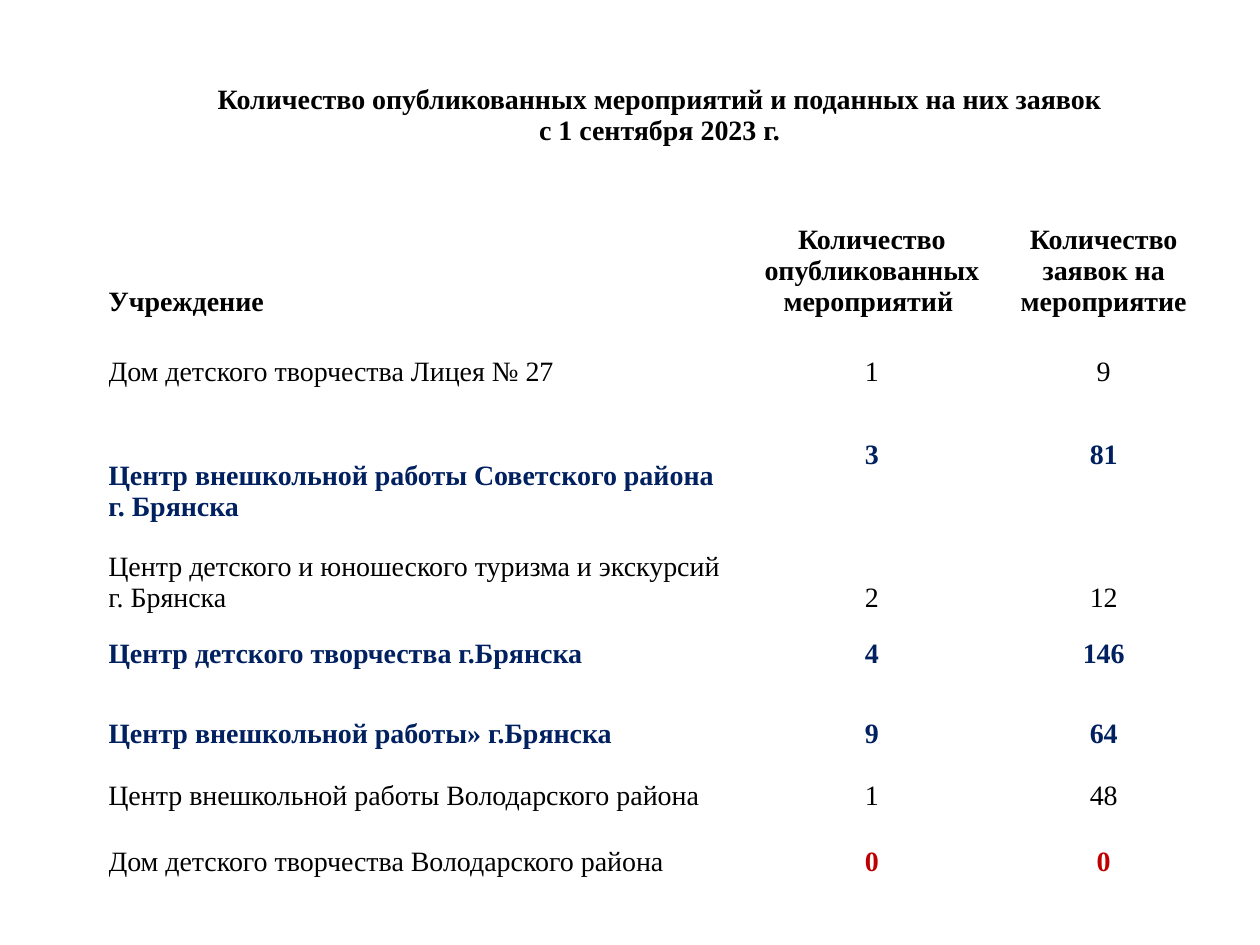
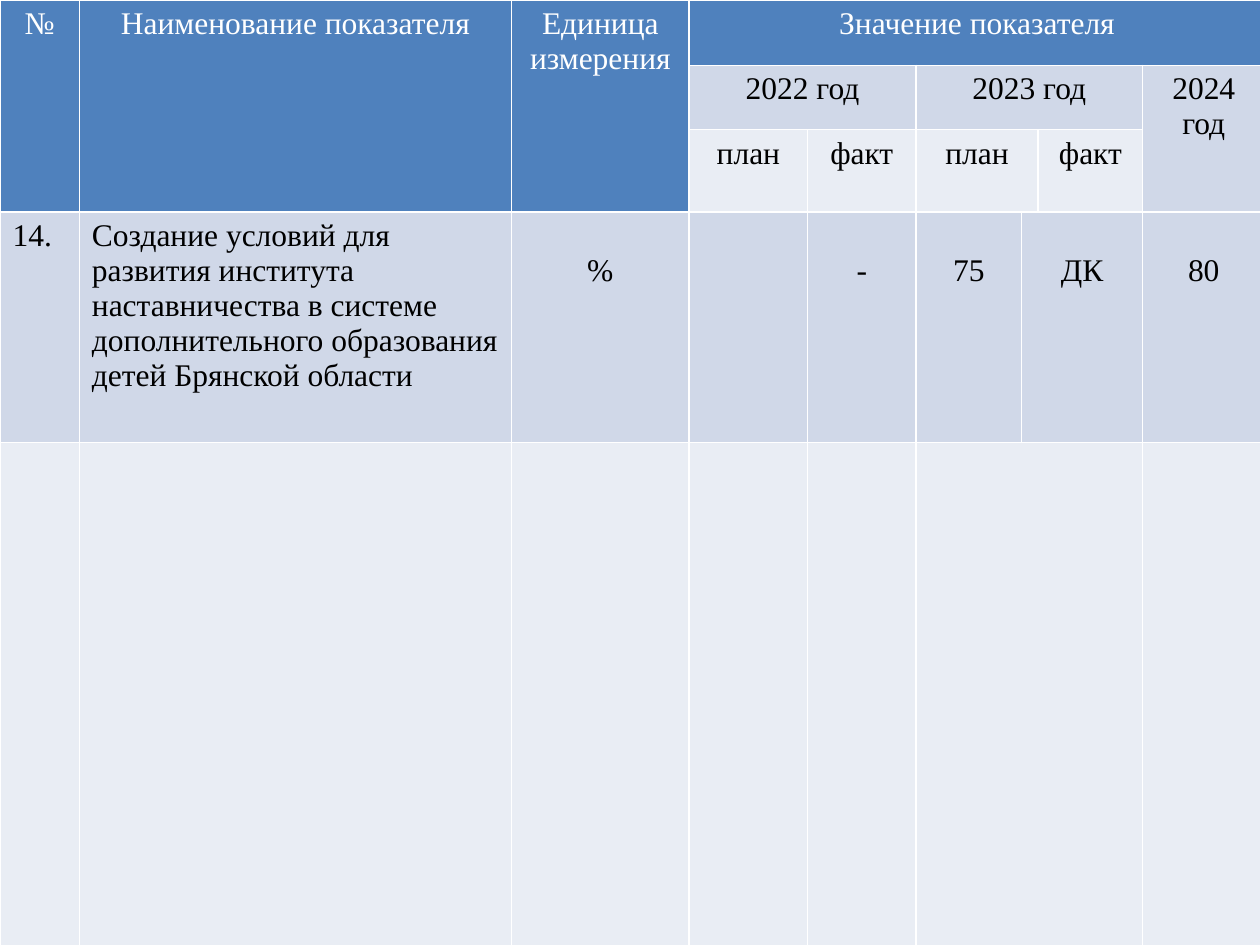
from lxml import etree
from pptx import Presentation
from pptx.dml.color import RGBColor
from pptx.enum.text import MSO_ANCHOR, PP_ALIGN
from pptx.oxml.ns import qn
from pptx.util import Inches, Pt

LEFT, CENTER = PP_ALIGN.LEFT, PP_ALIGN.CENTER
TOP, MIDDLE, BOTTOM = MSO_ANCHOR.TOP, MSO_ANCHOR.MIDDLE, MSO_ANCHOR.BOTTOM

FONT = "Times New Roman"
BLACK, WHITE, NAVY, RED = "000000", "FFFFFF", "002060", "C00000"
HEADER_BLUE, BAND_DARK, BAND_LIGHT = "4F81BD", "D0D8E8", "E9EDF4"

# Shared by both slides
BLANK_LAYOUT = 6
BORDER_EDGES = ("a:lnL", "a:lnR", "a:lnT", "a:lnB")

# Slide 1: each institution row is (anchor, lines), a line is
# (institution, events, applications, name colour, number colour)
EVENT_COLUMNS = (5.07, 1.98, 1.7)
EVENT_ROWS = (0.73, 1.24, 0.56, 1.07, 0.72, 0.65, 0.92, 0.81)
EVENT_SIZE, EVENT_GAP = 16, 17.7
EVENT_TITLE = ("Количество опубликованных мероприятий и поданных на них заявок",
               "с 1 сентября 2023 г.")
EVENT_HEADINGS = ("Учреждение", "Количество опубликованных мероприятий ",
                  "Количество заявок на мероприятие")
INSTITUTIONS = (
    (BOTTOM, [("Дом детского творчества Лицея № 27", "1", "9", BLACK, BLACK)]),
    (MIDDLE, [("Центр внешкольной работы Советского района\nг. Брянска",
               "3", "81", NAVY, NAVY)]),
    (BOTTOM, [("Центр детского и юношеского туризма и экскурсий\nг. Брянска",
               "2", "12", BLACK, BLACK)]),
    (MIDDLE, [("Центр детского творчества г.Брянска", "4", "146", NAVY, NAVY)]),
    (BOTTOM, [("Центр внешкольной работы» г.Брянска", "9", "64", NAVY, NAVY),
              ("Центр внешкольной работы Володарского района",
               "1", "48", BLACK, BLACK)]),
    (MIDDLE, [("Дом детского творчества Володарского района",
               "0", "0", BLACK, RED)]),
)

# Slide 2: (row, column, rows spanned, columns spanned, text)
INDICATOR_COLUMNS = (0.63, 3.43, 1.41, 0.94, 0.86, 0.84, 0.13, 0.83, 0.97)
INDICATOR_ROWS = (0.52, 0.51, 0.65, 1.83, 4.05)
INDICATOR_FILLS = (HEADER_BLUE, BAND_DARK, BAND_LIGHT, BAND_DARK, BAND_LIGHT)
INDICATOR_SIZE, VALUE_ROW, VALUE_TOP = 18, 3, 0.33
INDICATOR_CELLS = (
    (0, 0, 3, 1, "№"),
    (0, 1, 3, 1, "Наименование показателя"),
    (0, 2, 3, 1, "Единица измерения"),
    (0, 3, 1, 6, "Значение показателя"),
    (1, 3, 1, 2, "2022 год"),
    (1, 5, 1, 3, "2023 год"),
    (1, 8, 2, 1, "2024 год"),
    (2, 3, 1, 1, "план"),
    (2, 4, 1, 1, "факт"),
    (2, 5, 1, 2, "план"),
    (2, 7, 1, 1, "факт"),
    (3, 0, 1, 1, "14."),
    (3, 1, 1, 1, "Создание условий для развития института наставничества "
                 "в системе дополнительного образования детей Брянской области"),
    (3, 2, 1, 1, "%"),
    (3, 3, 1, 1, ""),
    (3, 4, 1, 1, "-"),
    (3, 5, 1, 1, "75"),
    (3, 6, 1, 2, "ДК"),
    (3, 8, 1, 1, "80"),
    *((4, column, 1, 1, "") for column in range(5)),
    (4, 5, 1, 3, ""),
    (4, 8, 1, 1, ""),
)


def color(hex_string):
    return RGBColor.from_string(hex_string)


def add_grid(slide, left, top, columns, rows):
    """Add a plain table with the given column widths and row heights."""
    shape = slide.shapes.add_table(
        len(rows), len(columns), Inches(left), Inches(top),
        Inches(sum(columns)), Inches(sum(rows)))
    table = shape.table
    table.first_row = table.horz_banding = False
    for column, width in zip(table.columns, columns):
        column.width = Inches(width)
    for row, height in zip(table.rows, rows):
        row.height = Inches(height)
    return table


def write_line(frame, text, size, text_color, align=LEFT, bold=False, gap=0):
    """Write one paragraph, using the empty first one when there is one."""
    first = frame.paragraphs[0]
    paragraph = frame.add_paragraph() if first.runs else first
    paragraph.alignment = align
    paragraph.space_before = Pt(gap)
    run = paragraph.add_run()
    run.text = text
    run.font.name = FONT
    run.font.size = Pt(size)
    run.font.bold = bold
    run.font.color.rgb = color(text_color)


def set_borders(cell, line_color, points):
    properties = cell._tc.get_or_add_tcPr()
    for edge in BORDER_EDGES:
        line = etree.SubElement(properties, qn(edge), w=str(Pt(points)))
        fill = etree.SubElement(line, qn("a:solidFill"))
        etree.SubElement(fill, qn("a:srgbClr"), val=line_color)


def clear_cell(cell, anchor):
    """Remove fill and margins, and place the text vertically."""
    cell.fill.background()
    cell.margin_left = cell.margin_right = 0
    cell.margin_top = cell.margin_bottom = 0
    cell.vertical_anchor = anchor


def build_events_slide(presentation):
    slide = presentation.slides.add_slide(presentation.slide_layouts[BLANK_LAYOUT])
    table = add_grid(slide, 0.86, 0.55, EVENT_COLUMNS, EVENT_ROWS)
    anchors = [MIDDLE, BOTTOM] + [anchor for anchor, _ in INSTITUTIONS]
    for row, anchor in enumerate(anchors):
        for column in range(len(EVENT_COLUMNS)):
            clear_cell(table.cell(row, column), anchor)

    # Title across the whole table
    title = table.cell(0, 0)
    title.merge(table.cell(0, len(EVENT_COLUMNS) - 1))
    for text in EVENT_TITLE:
        write_line(title.text_frame, text, EVENT_SIZE, BLACK, CENTER, True)

    # Column headings
    for column, text in enumerate(EVENT_HEADINGS):
        write_line(table.cell(1, column).text_frame, text, EVENT_SIZE, BLACK,
                   CENTER if column else LEFT, True)

    # Institutions
    for row, (_, lines) in enumerate(INSTITUTIONS, start=2):
        for index, (name, events, requests, name_color, number_color) in enumerate(lines):
            gap = EVENT_GAP if index else 0
            for part, text in enumerate(name.split("\n")):
                write_line(table.cell(row, 0).text_frame, text, EVENT_SIZE,
                           name_color, LEFT, name_color != BLACK,
                           0 if part else gap)
            for column, text in enumerate((events, requests), start=1):
                write_line(table.cell(row, column).text_frame, text, EVENT_SIZE,
                           number_color, CENTER, number_color != BLACK, gap)
    # The two-line name of the Soviet district centre sits at the row's foot
    table.cell(3, 0).vertical_anchor = BOTTOM


def build_indicators_slide(presentation):
    slide = presentation.slides.add_slide(presentation.slide_layouts[BLANK_LAYOUT])
    table = add_grid(slide, 0, 0, INDICATOR_COLUMNS, INDICATOR_ROWS)
    for row, column, row_span, column_span, text in INDICATOR_CELLS:
        # Every cell under a span shares its look
        for spanned_row in range(row, row + row_span):
            for spanned_column in range(column, column + column_span):
                spanned = table.cell(spanned_row, spanned_column)
                set_borders(spanned, WHITE, 1)
                spanned.fill.solid()
                spanned.fill.fore_color.rgb = color(INDICATOR_FILLS[row])
        cell = table.cell(row, column)
        cell.vertical_anchor = TOP
        if row_span * column_span > 1:
            cell.merge(table.cell(row + row_span - 1, column + column_span - 1))
        if not text:
            continue
        is_label = row == VALUE_ROW and column < 2
        if row == VALUE_ROW and not is_label:
            cell.margin_top = Inches(VALUE_TOP)
        write_line(cell.text_frame, text, INDICATOR_SIZE,
                   BLACK if row else WHITE, LEFT if is_label else CENTER)


def main():
    presentation = Presentation()
    presentation.slide_width = Inches(10)
    presentation.slide_height = Inches(7.5)
    build_events_slide(presentation)
    build_indicators_slide(presentation)
    presentation.save("out.pptx")


if __name__ == "__main__":
    main()
